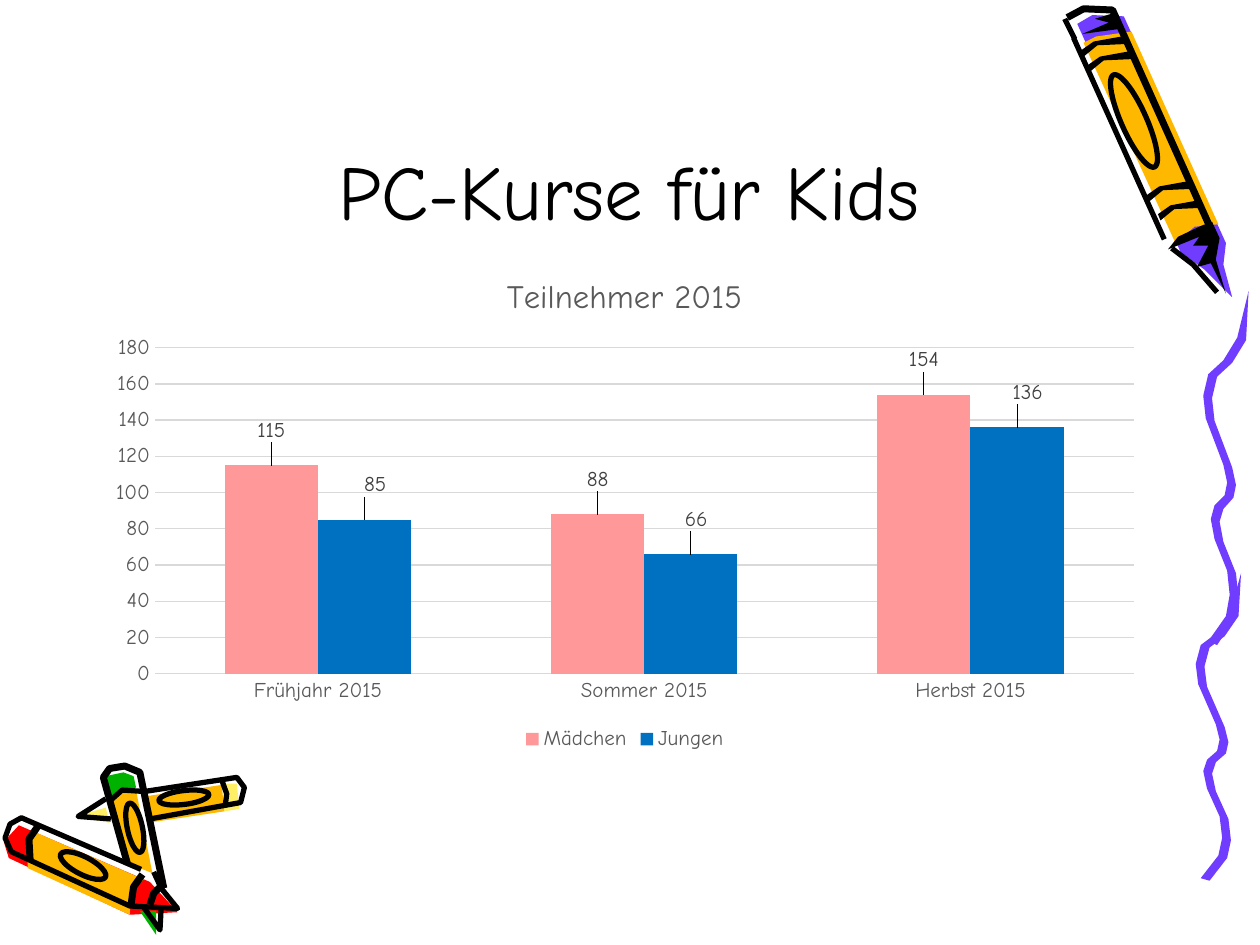
from lxml.etree import SubElement
from pptx import Presentation
from pptx.chart.data import CategoryChartData
from pptx.dml.color import RGBColor
from pptx.enum.chart import XL_CHART_TYPE, XL_LABEL_POSITION, XL_LEGEND_POSITION, XL_TICK_MARK
from pptx.enum.shapes import MSO_CONNECTOR, MSO_SHAPE
from pptx.enum.text import MSO_ANCHOR, PP_ALIGN
from pptx.oxml.ns import qn
from pptx.util import Pt

FONT = "Comic Neue"
UNIT = 0.72  # drawing coordinates are hundredths of an inch
BLACK, PURPLE, ORANGE = "000000", "703DFF", "FFB800"
RED, GREEN, YELLOW = "FF0000", "00B200", "FFEF66"
GREY, DARK_GREY, GRID = "595959", "404040", "D9D9D9"

# Content
TITLE = "PC-Kurse für Kids"
CHART_TITLE = "Teilnehmer 2015"
SEASONS = ["Frühjahr 2015", "Sommer 2015", "Herbst 2015"]
# name, values, colour, sideways label shift per bar (share of chart width)
SERIES = [("Mädchen", (115, 88, 154), "FF9999", (0, 0, 0)),
          ("Jungen", (85, 66, 136), "0070C0", (0.01, 0.005, 0.01))]
LABEL_RISE = -0.035
PLOT_AREA = {"x": 0.057, "y": 0.19, "w": 0.923, "h": 0.647}

# Filled areas, back to front: (colour, corners)
PENCIL_BODY = [
    (PURPLE, [(855, 19), (937, 200), (956, 214), (978, 236), (971, 210), (973, 193), (892, 13), (867, 12)]),
    (ORANGE, [(933, 193), (948, 180), (967, 178), (898, 25), (870, 29), (860, 34)]),
]
PENCIL_MARKS = [
    (BLACK, [(859, 27), (889, 23), (882, 11), (869, 15), (880, 18)]),
    (BLACK, [(927, 198), (935, 188), (954, 179), (962, 176), (968, 189), (965, 206), (973, 233),
             (961, 209), (950, 212), (959, 195), (947, 195), (952, 188)]),
]
CRAYON_FILLS = [
    (YELLOW, [(177, 622), (188, 622), (190, 642), (178, 644)]),
    (ORANGE, [(176, 623), (116, 632), (118, 653), (178, 644)]),
    (YELLOW, [(84, 641), (60, 648), (87, 653)]),
    (RED, [(15, 655), (119, 700), (141, 724), (103, 726), (7, 681), (3, 668)]),
    (ORANGE, [(22, 689), (103, 726), (104, 708), (114, 698), (29, 661), (22, 672)]),
    (GREEN, [(84, 616), (98, 613), (106, 616), (108, 625), (87, 634)]),
    (GREEN, [(124, 723), (124, 742), (111, 723)]),
    (ORANGE, [(88, 633), (95, 626), (108, 627), (121, 693), (101, 685)]),
]
# Ink strokes: (width in points, corners)
CRAYON_STROKES = [
    (3, [(116, 628), (188, 617), (194, 625), (191, 637), (119, 650)]),
    (3, [(176, 619), (180, 630), (179, 638)]),
    (3, [(88, 650), (62, 648), (84, 634)]),
    (4, [(101, 685), (82, 617), (87, 610), (99, 608), (111, 613), (130, 705)]),
    (3, [(88, 635), (97, 627), (112, 628)]),
    (3, [(114, 720), (127, 738), (128, 719)]),
    (3, [(112, 690), (17, 649), (8, 654), (4, 665), (9, 676), (103, 719), (141, 721), (128, 705), (122, 692)]),
    (4, [(113, 694), (106, 704), (104, 718)]),
    (4, [(127, 704), (122, 709), (119, 718)]),
    (4, [(30, 656), (23, 666), (24, 683)]),
]
PENCIL_STROKES = [
    (4, [(847, 14), (860, 7), (883, 8), (962, 184)]),
    (3, [(852, 30), (924, 190)]),
    (3, [(930, 197), (947, 210), (966, 232)]),
]
PENCIL_EDGE = (845, 15, 853, 31)
# Oval rings: centre x, centre y, length, thickness, tilt
CRAYON_RINGS = [(66, 687, 40, 14, 27), (107, 657, 40, 12, 78), (146, 633, 40, 11, -7)]
PENCIL_RINGS = [(900, 96, 80, 20, 66)]
# One band outline, repeated along the pencil
BAND = [(0, 0), (11, -9), (33, -10), (30, -16), (8, -12), (-2, -5)]
BAND_STARTS = [(860, 45), (865, 57), (912, 160), (921, 175)]
# Left side of the wavy ribbon, bottom to top; it is drawn twice
RIBBON = [(953, 697), (967, 679), (970, 665), (968, 648), (958, 626), (955, 612), (958, 603), (966, 596),
          (968, 587), (965, 575), (951, 543), (949, 527), (953, 512), (965, 503), (976, 487), (985, 455)]
RIBBON_WIDTH = 7
UPPER_TOP, UPPER_STRETCH, UPPER_SHIFT = 231, 1.15, 6


def rgb(hex_colour):
    return RGBColor.from_string(hex_colour)


def style(font, size, colour):
    font.name, font.size, font.bold = FONT, Pt(size), False
    font.color.rgb = rgb(colour)


def outline(shapes, points, closed):
    builder = shapes.build_freeform(*points[0], scale=Pt(UNIT))
    builder.add_line_segments(points[1:], close=closed)
    s = builder.convert_to_shape()
    s.shadow.inherit = False
    return s


def draw_fills(shapes, areas):
    for colour, points in areas:
        s = outline(shapes, points, True)
        s.fill.solid()
        s.fill.fore_color.rgb = rgb(colour)
        s.line.fill.background()


def ink(s, width):
    s.fill.background()
    s.line.color.rgb = rgb(BLACK)
    s.line.width = Pt(width)


def draw_ink(shapes, strokes, rings):
    for width, points in strokes:
        ink(outline(shapes, points, False), width)
    for x, y, length, thickness, tilt in rings:
        box = (x - length / 2, y - thickness / 2, length, thickness)
        s = shapes.add_shape(MSO_SHAPE.OVAL, *(Pt(v * UNIT) for v in box))
        s.rotation = tilt
        s.shadow.inherit = False
        ink(s, 3)


def manual_layout(parent, index, **values):
    """Insert a c:layout child holding the given settings."""
    layout = parent.makeelement(qn("c:layout"))
    parent.insert(index, layout)
    manual = SubElement(layout, qn("c:manualLayout"))
    for tag, value in values.items():
        SubElement(manual, qn(f"c:{tag}")).set("val", str(value))


prs = Presentation()
prs.slide_width, prs.slide_height = Pt(720), Pt(540)
slide = prs.slides.add_slide(prs.slide_layouts[6])
shapes = slide.shapes

# Crayons
draw_fills(shapes, PENCIL_BODY)
crayons = shapes.add_group_shape().shapes
draw_fills(crayons, CRAYON_FILLS)
draw_ink(crayons, CRAYON_STROKES, CRAYON_RINGS)

# Ribbon: lower part, then the stretched upper part
ribbon = RIBBON + [(x + RIBBON_WIDTH, y + 2) for x, y in RIBBON[-2::-1]]
top = RIBBON[-1][1]
upper = [(x + UPPER_SHIFT, UPPER_TOP + (y - top) * UPPER_STRETCH) for x, y in ribbon]
draw_fills(shapes.add_group_shape().shapes, [(PURPLE, ribbon), (PURPLE, upper)])

# Ink on the pencil
pencil = shapes.add_group_shape().shapes
bands = [(BLACK, [(x + dx, y + dy) for dx, dy in BAND]) for x, y in BAND_STARTS]
draw_fills(pencil, PENCIL_MARKS + bands)
draw_ink(pencil, PENCIL_STROKES, PENCIL_RINGS)
edge = pencil.add_connector(MSO_CONNECTOR.STRAIGHT, *(Pt(v * UNIT) for v in PENCIL_EDGE))
edge.line.color.rgb = rgb(BLACK)
edge.line.width = Pt(3)
SubElement(edge._element.spPr, qn("a:effectLst"))

# Title
tf = shapes.add_textbox(Pt(89.3), Pt(12.2), Pt(540.7), Pt(126)).text_frame
tf.word_wrap = True
tf.vertical_anchor = MSO_ANCHOR.BOTTOM
tf.text = TITLE
p = tf.paragraphs[0]
p.alignment = PP_ALIGN.CENTER
style(p.runs[0].font, 44, BLACK)

# Chart
data = CategoryChartData()
data.categories = SEASONS
for name, values, *_ in SERIES:
    data.add_series(name, values)
chart = shapes.add_chart(XL_CHART_TYPE.COLUMN_CLUSTERED, Pt(54), Pt(144), Pt(606), Pt(288), data).chart
style(chart.font, 10, BLACK)
chart.has_title = True
tf = chart.chart_title.text_frame
tf.text = CHART_TITLE
style(tf.paragraphs[0].runs[0].font, 18.6, GREY)
chart.chart_title.include_in_layout = False
chart.has_legend = True
chart.legend.position = XL_LEGEND_POSITION.BOTTOM
chart.legend.include_in_layout = False
style(chart.legend.font, 12, GREY)

# Axes
for axis in (chart.category_axis, chart.value_axis):
    axis.major_tick_mark = axis.minor_tick_mark = XL_TICK_MARK.NONE
    axis.format.line.fill.background()
    style(axis.tick_labels.font, 12, GREY)
axis.minimum_scale, axis.maximum_scale, axis.major_unit = 0, 180, 20
axis.major_gridlines.format.line.color.rgb = rgb(GRID)
axis.major_gridlines.format.line.width = Pt(0.75)

# Bars and their raised value labels
plot = chart.plots[0]
plot.gap_width, plot.overlap, plot.vary_by_categories = 150, 0, False
for series, (_, _, colour, shifts) in zip(plot.series, SERIES):
    series.format.fill.solid()
    series.format.fill.fore_color.rgb = rgb(colour)
    style(series.data_labels.font, 12, DARK_GREY)
    series.data_labels.show_value = True
    for i, shift in enumerate(shifts):
        label = series.points[i].data_label
        style(label.font, 12, DARK_GREY)
        label.position = XL_LABEL_POSITION.OUTSIDE_END
        manual_layout(series._element.xpath(".//c:dLbl")[i], 1, x=shift, y=LABEL_RISE)

# Plot area position
area = chart._chartSpace.chart.plotArea
for old in area.findall(qn("c:layout")):
    area.remove(old)
manual_layout(area, 0, layoutTarget="inner", xMode="edge", yMode="edge", **PLOT_AREA)

prs.save("out.pptx")
